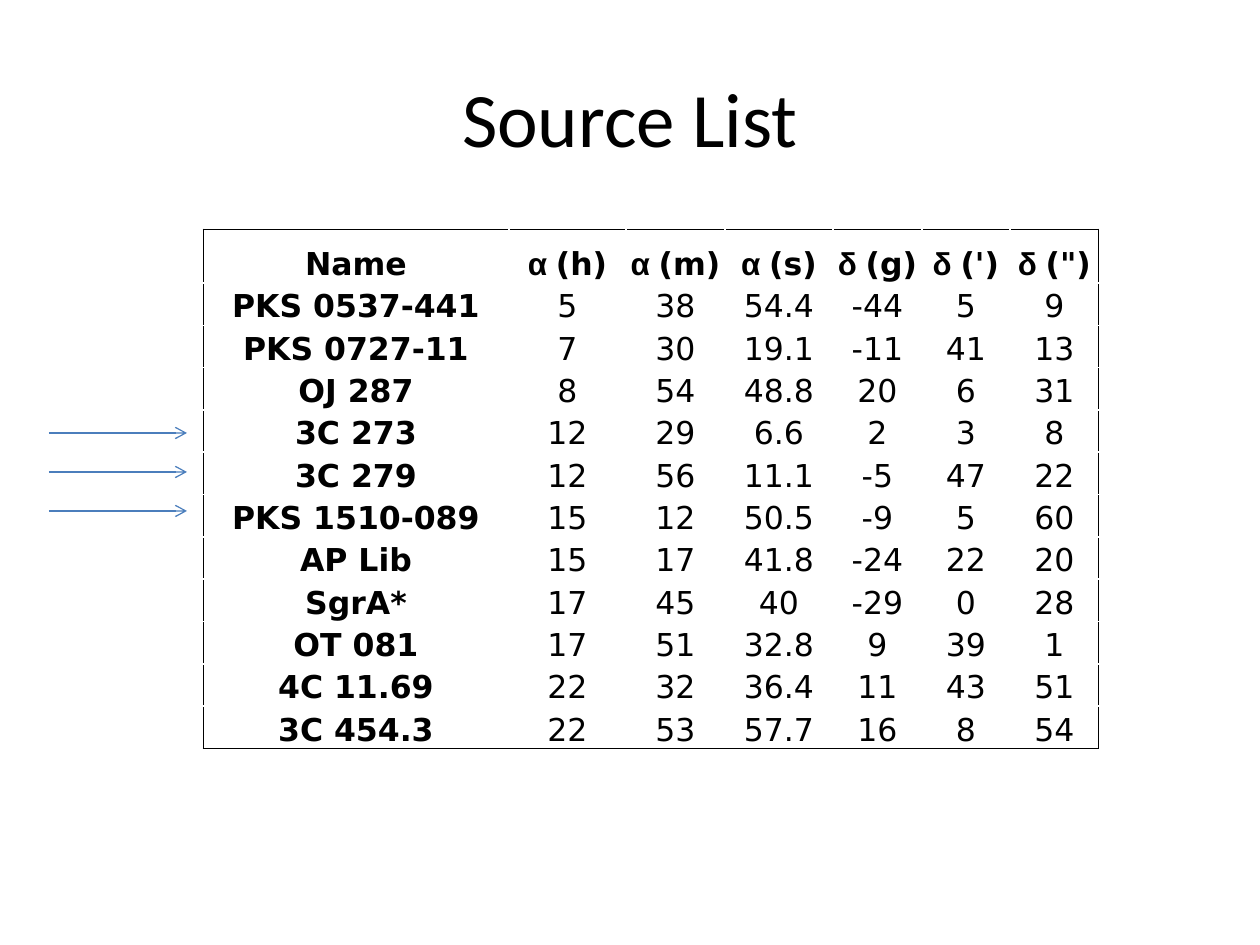
from lxml.etree import SubElement
from pptx import Presentation
from pptx.dml.color import RGBColor
from pptx.enum.shapes import MSO_CONNECTOR
from pptx.enum.text import MSO_ANCHOR, PP_ALIGN
from pptx.oxml.ns import qn
from pptx.util import Pt

PX = 914400 // 126
BLACK, BLUE = "000000", "4B7EBC"

TITLE = "Source List"
HEAD = ["Name", "α (h)", "α (m)", "α (s)", "δ (g)", "δ (')", 'δ (")']
SOURCES = [
    ("PKS 0537-441", "5", "38", "54.4", "-44", "5", "9"),
    ("PKS 0727-11", "7", "30", "19.1", "-11", "41", "13"),
    ("OJ 287", "8", "54", "48.8", "20", "6", "31"),
    ("3C 273", "12", "29", "6.6", "2", "3", "8"),
    ("3C 279", "12", "56", "11.1", "-5", "47", "22"),
    ("PKS 1510-089", "15", "12", "50.5", "-9", "5", "60"),
    ("AP Lib", "15", "17", "41.8", "-24", "22", "20"),
    ("SgrA*", "17", "45", "40", "-29", "0", "28"),
    ("OT 081", "17", "51", "32.8", "9", "39", "1"),
    ("4C 11.69", "22", "32", "36.4", "11", "43", "51"),
    ("3C 454.3", "22", "53", "57.7", "16", "8", "54"),
]
ROWS = [HEAD, *SOURCES]
WIDTHS = [306, 117, 99, 108, 89, 88, 89]
LEFT, TOP, HIGH, HEAD_HIGH = 203, 229, 520, 54
ARROWS = {"left": 49, "right": 187, "top": 433, "step": 39, "count": 3}
CELL = {"margin_left": PX, "margin_right": PX, "margin_top": PX,
        "margin_bottom": 0, "vertical_anchor": MSO_ANCHOR.BOTTOM}


def color(code):
    return RGBColor.from_string(code)


def assign(item, values):
    for name, value in values.items():
        setattr(item, name, value)


def add_run(para, text, face, size, bold=False):
    run = para.add_run()
    run.text = text
    assign(run.font, {"name": face, "size": Pt(size), "bold": bold})
    run.font.color.rgb = color(BLACK)


def add_edge(cell, side):
    line = SubElement(cell._tc.get_or_add_tcPr(), qn(f"a:ln{side}"), w=str(Pt(0.5)))
    fill = SubElement(line, qn("a:solidFill"))
    SubElement(fill, qn("a:srgbClr"), val=BLACK)


def fill_cell(cell, text, row, col):
    assign(cell, CELL)
    outer = {"L": col == 0, "R": col == len(HEAD) - 1,
             "T": row == 0, "B": row == len(ROWS) - 1}
    for side, drawn in outer.items():
        if drawn:
            add_edge(cell, side)
    cell.fill.background()
    para = cell.text_frame.paragraphs[0]
    para.alignment = PP_ALIGN.CENTER
    bold = row == 0 or col == 0
    if row == 0 and col > 0:
        greek, text = text.split()
        add_run(para, greek + " ", "Arial", 18, bold)
    add_run(para, text, "DejaVu Sans", 18, bold)


def add_sources(slide):
    frame = slide.shapes.add_table(len(ROWS), len(HEAD), LEFT * PX, TOP * PX,
                                   sum(WIDTHS) * PX, HIGH * PX)
    table = frame.table
    assign(table, {"first_row": False, "horz_banding": False})
    for column, width in zip(table.columns, WIDTHS):
        column.width = width * PX
    for r, texts in enumerate(ROWS):
        high = (HIGH - HEAD_HIGH) * PX // len(SOURCES) if r else HEAD_HIGH * PX
        table.rows[r].height = high
        for c, text in enumerate(texts):
            fill_cell(table.cell(r, c), text, r, c)


def add_arrow(slide, y):
    arrow = slide.shapes.add_connector(MSO_CONNECTOR.STRAIGHT, ARROWS["left"] * PX,
                                       y * PX, ARROWS["right"] * PX, y * PX)
    arrow.line.color.rgb = color(BLUE)
    arrow.line.width = Pt(0.75)
    SubElement(arrow.line._get_or_add_ln(), qn("a:tailEnd"), type="arrow")
    SubElement(arrow._element.spPr, qn("a:effectLst"))


def main():
    deck = Presentation()
    assign(deck, {"slide_width": 1260 * PX, "slide_height": 945 * PX})
    slide = deck.slides.add_slide(deck.slide_layouts[5])
    title = slide.shapes.title
    assign(title, {"left": 63 * PX, "top": 38 * PX,
                   "width": 1134 * PX, "height": 157 * PX})
    title.text_frame.vertical_anchor = MSO_ANCHOR.MIDDLE
    para = title.text_frame.paragraphs[0]
    para.alignment = PP_ALIGN.CENTER
    add_run(para, TITLE, "Calibri", 44)
    add_sources(slide)
    for i in range(ARROWS["count"]):
        add_arrow(slide, ARROWS["top"] + i * ARROWS["step"])
    deck.save("out.pptx")


if __name__ == "__main__":
    main()
